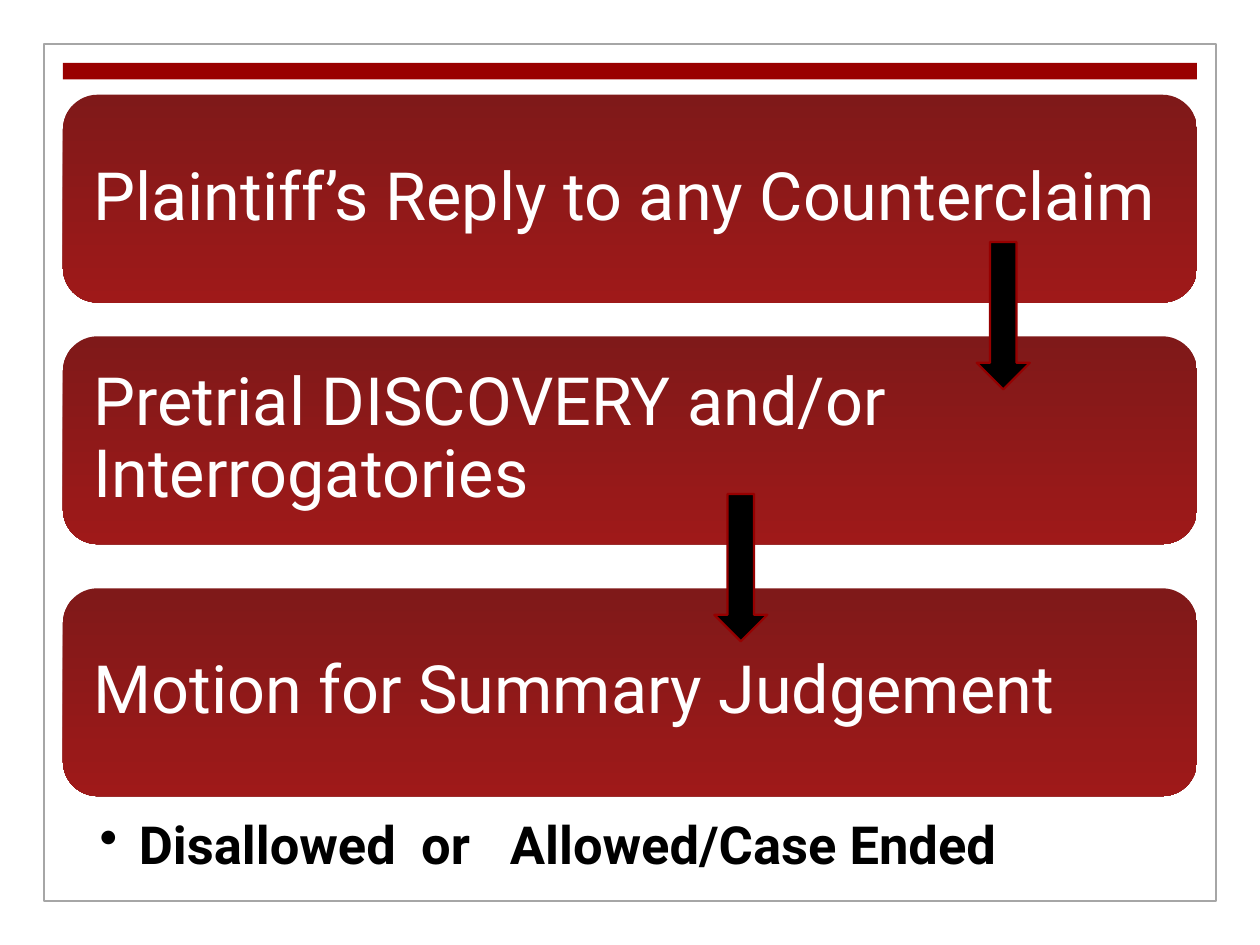
from lxml import etree
from pptx import Presentation
from pptx.dml.color import RGBColor
from pptx.enum.shapes import MSO_SHAPE as Shape
from pptx.enum.text import MSO_ANCHOR as Anchor, PP_ALIGN as Align
from pptx.oxml.ns import qn
from pptx.util import Cm, Pt


def color(hex_string):
    return RGBColor.from_string(hex_string)


def add_shape(kind, left, top, width, height, fill=None, line=None, line_width=1):
    shape = slide.shapes.add_shape(kind, Cm(left), Cm(top), Cm(width), Cm(height))
    shape.shadow.inherit = False
    if fill:
        shape.fill.solid()
        shape.fill.fore_color.rgb = color(fill)
    else:
        shape.fill.background()
    if line:
        shape.line.color.rgb = color(line)
        shape.line.width = Pt(line_width)
    else:
        shape.line.fill.background()
    return shape


presentation = Presentation()
presentation.slide_width, presentation.slide_height = Cm(25.4), Cm(19.05)
slide = presentation.slides.add_slide(presentation.slide_layouts[6])

# Frame and top bar
left, width = 1.27, 22.86
add_shape(Shape.RECTANGLE, 0.89, 0.89, 23.62, 17.27, line="A6A6A6")
add_shape(Shape.RECTANGLE, left, 1.27, width, 0.33, fill="990000")

# Steps of the procedure
steps = [
    (1.91, "Plaintiff’s Reply to any Counterclaim"),
    (6.78, "Pretrial DISCOVERY and/or Interrogatories"),
    (11.86, "Motion for Summary Judgement"),
]
for top, label in steps:
    step = add_shape(Shape.ROUNDED_RECTANGLE, left, top, width, 4.19)
    step.fill.gradient()
    step.fill.gradient_angle = 270
    for stop, position, shade in zip(step.fill.gradient_stops, (0, 1), ("720000", "950000")):
        stop.position = position
        stop.color.rgb = color(shade)
    for shade in step._element.spPr.iter(qn("a:srgbClr")):
        etree.SubElement(shade, qn("a:alpha"), val="90000")

    text_frame = step.text_frame
    text_frame.text = label
    text_frame.word_wrap = True
    text_frame.vertical_anchor = Anchor.MIDDLE
    text_frame.margin_left = text_frame.margin_right = Cm(0.41)
    text_frame.margin_top = text_frame.margin_bottom = Cm(0.41)
    paragraph = text_frame.paragraphs[0]
    paragraph.alignment = Align.LEFT
    paragraph.line_spacing = 0.9
    font = paragraph.runs[0].font
    font.name, font.size, font.color.rgb = "Roboto", Pt(38), color("FFFFFF")

# Outcomes of the motion, spaced by tab stops
outcomes = slide.shapes.add_textbox(Cm(left), Cm(16.38), Cm(width), Cm(1.75))
text_frame = outcomes.text_frame
text_frame.word_wrap = True
text_frame.margin_left, text_frame.margin_right = Cm(0.74), Cm(0.76)
text_frame.text = "Disallowed\tor\tAllowed/Case Ended"
paragraph = text_frame.paragraphs[0]
properties = paragraph._p.get_or_add_pPr()
properties.set("marL", str(Cm(0.79)))
properties.set("indent", str(-Cm(0.79)))
etree.SubElement(properties, qn("a:buChar"), char="•")
tabs = etree.SubElement(properties, qn("a:tabLst"))
for position in (6.48, 8.27):
    etree.SubElement(tabs, qn("a:tab"), pos=str(Cm(position)), algn="l")
paragraph.line_spacing = 0.9
font = paragraph.runs[0].font
font.name, font.size, font.bold = "Roboto", Pt(30), True
font.color.rgb = color("000000")

# Arrows between the steps
for arrow_left, arrow_top in ((19.69, 4.88), (14.4, 9.96)):
    add_shape(Shape.DOWN_ARROW, arrow_left, arrow_top, 1.07, 2.97,
              fill="000000", line="960000", line_width=1.25)

presentation.save("out.pptx")
